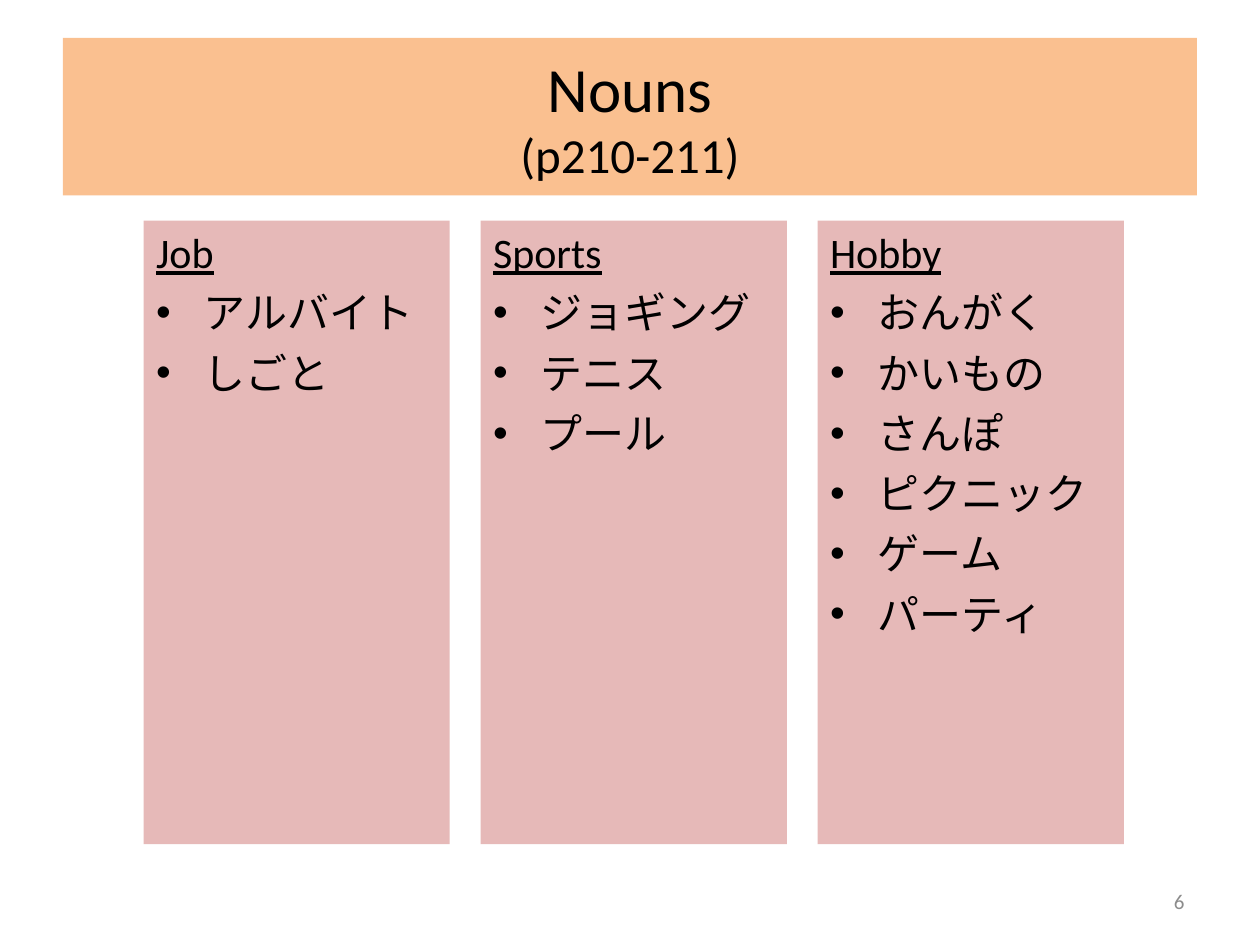
from lxml.etree import SubElement
from pptx import Presentation
from pptx.dml.color import RGBColor
from pptx.enum.shapes import MSO_SHAPE
from pptx.enum.text import MSO_ANCHOR, PP_ALIGN
from pptx.oxml.ns import qn
from pptx.util import Inches, Pt

ORANGE = RGBColor(0xFA, 0xC0, 0x90)
PINK = RGBColor(0xE6, 0xB9, 0xB8)
BLACK = RGBColor(0, 0, 0)
GREY = RGBColor(0x8C, 0x8C, 0x8C)

# Grid of 100 columns by 75 rows; boxes are left, top, width, height in cells
CELL = Inches(0.1)
TITLE_BOX = (5, 3, 90, 12.5)
LISTS_BOX = (11.4, 17.5, 77.8, 49.5)
NUMBER_BOX = (71.7, 69.5, 23.3, 4)
LIST_WIDTH = 24.3
HANGING = int(3.8 * CELL)

NOUNS = {
    "Job": ["アルバイト", "しごと"],
    "Sports": ["ジョギング", "テニス", "プール"],
    "Hobby": ["おんがく", "かいもの", "さんぽ", "ピクニック", "ゲーム", "パーティ"],
}


def cells(box):
    return [int(length * CELL) for length in box]


def style(span, size, color=BLACK, font="Calibri"):
    span.font.size = Pt(size)
    span.font.name = font
    span.font.color.rgb = color


def add_panel(page, box, fill, anchor):
    panel = page.shapes.add_shape(MSO_SHAPE.RECTANGLE, *cells(box))
    panel.shadow.inherit = False
    panel.fill.solid()
    panel.fill.fore_color.rgb = fill
    panel.line.fill.background()
    panel.text_frame.word_wrap = True
    panel.text_frame.vertical_anchor = anchor
    return panel.text_frame


def add_title(page, box):
    frame = add_panel(page, box, ORANGE, MSO_ANCHOR.MIDDLE)
    frame.text = "Nouns\v(p210-211)"
    para = frame.paragraphs[0]
    para.alignment = PP_ALIGN.CENTER
    for span, size in zip(para.runs, (36, 28)):
        style(span, size)


def add_bullet(para):
    properties = para._p.get_or_add_pPr()
    SubElement(properties, qn("a:buFont")).set("typeface", "Arial")
    SubElement(properties, qn("a:buChar")).set("char", "•")


def add_word_list(page, box, heading, words):
    frame = add_panel(page, box, PINK, MSO_ANCHOR.TOP)
    frame.text = "\n".join([heading, *words])
    for index, para in enumerate(frame.paragraphs):
        para.alignment = PP_ALIGN.LEFT
        para.space_before = Pt(5.6)
        properties = para._p.get_or_add_pPr()
        properties.set("marL", str(HANGING))
        properties.set("indent", str(-HANGING))
        span = para.runs[0]
        if index == 0:
            style(span, 24)
            span.font.underline = True
        else:
            add_bullet(para)
            style(span, 24, font="Roboto")
            SubElement(span._r.get_or_add_rPr(), qn("a:ea")).set("typeface", "Roboto")


def add_word_lists(page, box):
    left, top, width, height = box
    pitch = (width - LIST_WIDTH) / (len(NOUNS) - 1)
    for index, (heading, words) in enumerate(NOUNS.items()):
        list_box = (left + index * pitch, top, LIST_WIDTH, height)
        add_word_list(page, list_box, heading, words)


def add_page_number(page, box):
    frame = page.shapes.add_textbox(*cells(box)).text_frame
    frame.word_wrap = True
    frame.vertical_anchor = MSO_ANCHOR.MIDDLE
    frame.text = "6"
    para = frame.paragraphs[0]
    para.alignment = PP_ALIGN.RIGHT
    style(para.runs[0], 12, GREY)


def main():
    deck = Presentation()
    deck.slide_width, deck.slide_height = 100 * CELL, 75 * CELL
    page = deck.slides.add_slide(deck.slide_layouts[6])
    add_title(page, TITLE_BOX)
    add_word_lists(page, LISTS_BOX)
    add_page_number(page, NUMBER_BOX)
    deck.save("out.pptx")


if __name__ == "__main__":
    main()
